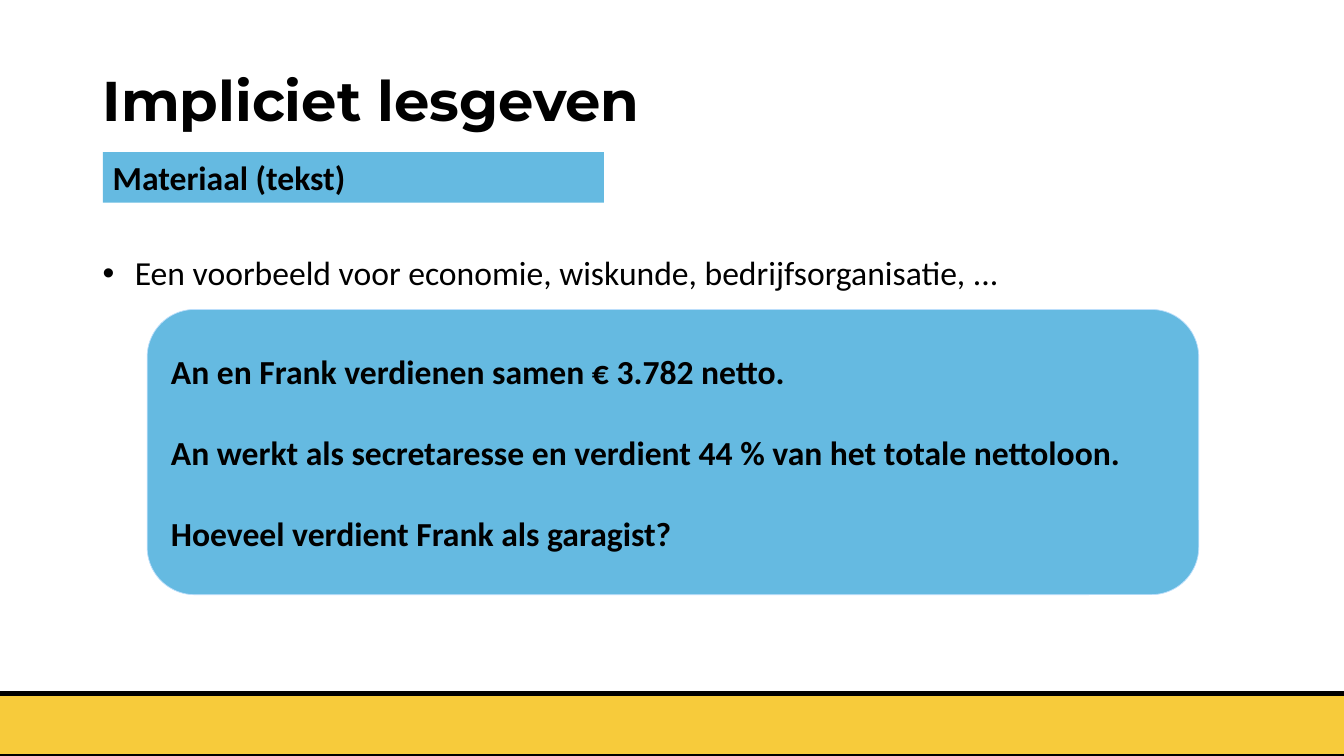
from dataclasses import dataclass

from lxml import etree
from pptx import Presentation
from pptx.dml.color import RGBColor
from pptx.enum.shapes import MSO_SHAPE
from pptx.enum.text import MSO_ANCHOR, PP_ALIGN
from pptx.oxml.ns import qn
from pptx.util import Inches, Pt

RECTANGLE = MSO_SHAPE.RECTANGLE
ROUNDED = MSO_SHAPE.ROUNDED_RECTANGLE
MIDDLE = MSO_ANCHOR.MIDDLE
TOP = MSO_ANCHOR.TOP
LEFT = PP_ALIGN.LEFT
TITLE_ONLY = 5


@dataclass(frozen=True)
class Theme:
    ink: str = "000000"
    yellow: str = "F7CB3B"
    blue: str = "65BAE1"
    pale_blue: str = "BBDEFB"
    heading_font: str = "Montserrat"
    body_font: str = "Calibri"
    heading_size: float = 40
    body_size: float = 24
    statement_gap: float = 29.3


@dataclass(frozen=True)
class Panel:
    left: float
    top: float
    width: float
    height: float
    fill: str
    outline: str | None = None
    outline_width: float = 0
    preset: MSO_SHAPE = RECTANGLE
    anchor: MSO_ANCHOR = TOP
    lines: tuple[str, ...] = ()


THEME = Theme()

PANELS = (
    # Footer band
    Panel(-0.37, 6.88, 14.07, 0.62, THEME.yellow, THEME.ink, 3),
    # Exercise card
    Panel(1.46, 3.07, 10.43, 2.83, THEME.blue, THEME.pale_blue, 0.5, ROUNDED, MIDDLE, (
        "An en Frank verdienen samen € 3.782 netto.",
        "An werkt als secretaresse en verdient 44 % van het totale nettoloon.",
        "Hoeveel verdient Frank als garagist?",
    )),
    # Topic label
    Panel(1.02, 1.51, 4.97, 0.5, THEME.blue, lines=("Materiaal (tekst)",)),
)


def style_paragraph(paragraph, font_name: str, size: float, bold: bool) -> None:
    paragraph.alignment = LEFT
    for run in paragraph.runs:
        run.font.name = font_name
        run.font.size = Pt(size)
        run.font.bold = bold
        run.font.color.rgb = RGBColor.from_string(THEME.ink)


def place(shape, left: float, top: float, width: float, height: float) -> None:
    shape.left, shape.top = Inches(left), Inches(top)
    shape.width, shape.height = Inches(width), Inches(height)


def add_title(slide, wording: str) -> None:
    title = slide.shapes.title
    place(title, 0.92, 0.4, 11.5, 1.25)
    frame = title.text_frame
    frame.text = wording
    frame.vertical_anchor = MIDDLE
    frame.paragraphs[0].line_spacing = 0.9
    style_paragraph(frame.paragraphs[0], THEME.heading_font, THEME.heading_size, True)


def add_bullet(slide, wording: str) -> None:
    box = slide.shapes.add_textbox(Inches(0.92), Inches(2.5), Inches(11.5), Inches(0.5))
    frame = box.text_frame
    frame.word_wrap = True
    frame.text = wording
    paragraph = frame.paragraphs[0]
    paragraph.line_spacing = 0.9
    properties = paragraph._p.get_or_add_pPr()
    indent = Inches(0.32)
    properties.set("marL", str(indent))
    properties.set("indent", str(-indent))
    etree.SubElement(properties, qn("a:buFont")).set("typeface", "Arial")
    etree.SubElement(properties, qn("a:buChar")).set("char", "•")
    style_paragraph(paragraph, THEME.body_font, THEME.body_size, False)


def add_panel(slide, panel: Panel) -> None:
    shape = slide.shapes.add_shape(
        panel.preset, Inches(panel.left), Inches(panel.top),
        Inches(panel.width), Inches(panel.height))
    shape.shadow.inherit = False
    shape.fill.solid()
    shape.fill.fore_color.rgb = RGBColor.from_string(panel.fill)
    if panel.outline:
        shape.line.color.rgb = RGBColor.from_string(panel.outline)
        shape.line.width = Pt(panel.outline_width)
    else:
        shape.line.fill.background()

    frame = shape.text_frame
    frame.word_wrap = True
    frame.vertical_anchor = panel.anchor
    for index, wording in enumerate(panel.lines):
        paragraph = frame.add_paragraph() if index else frame.paragraphs[0]
        paragraph.text = wording
        if index:
            paragraph.space_before = Pt(THEME.statement_gap)
        style_paragraph(paragraph, THEME.body_font, THEME.body_size, True)


def main() -> None:
    deck = Presentation()
    deck.slide_width, deck.slide_height = Inches(13.33), Inches(7.5)
    slide = deck.slides.add_slide(deck.slide_layouts[TITLE_ONLY])
    add_title(slide, "Impliciet lesgeven")
    add_bullet(slide, "Een voorbeeld voor economie, wiskunde, bedrijfsorganisatie, ...")
    for panel in PANELS:
        add_panel(slide, panel)
    deck.save("out.pptx")


if __name__ == "__main__":
    main()
